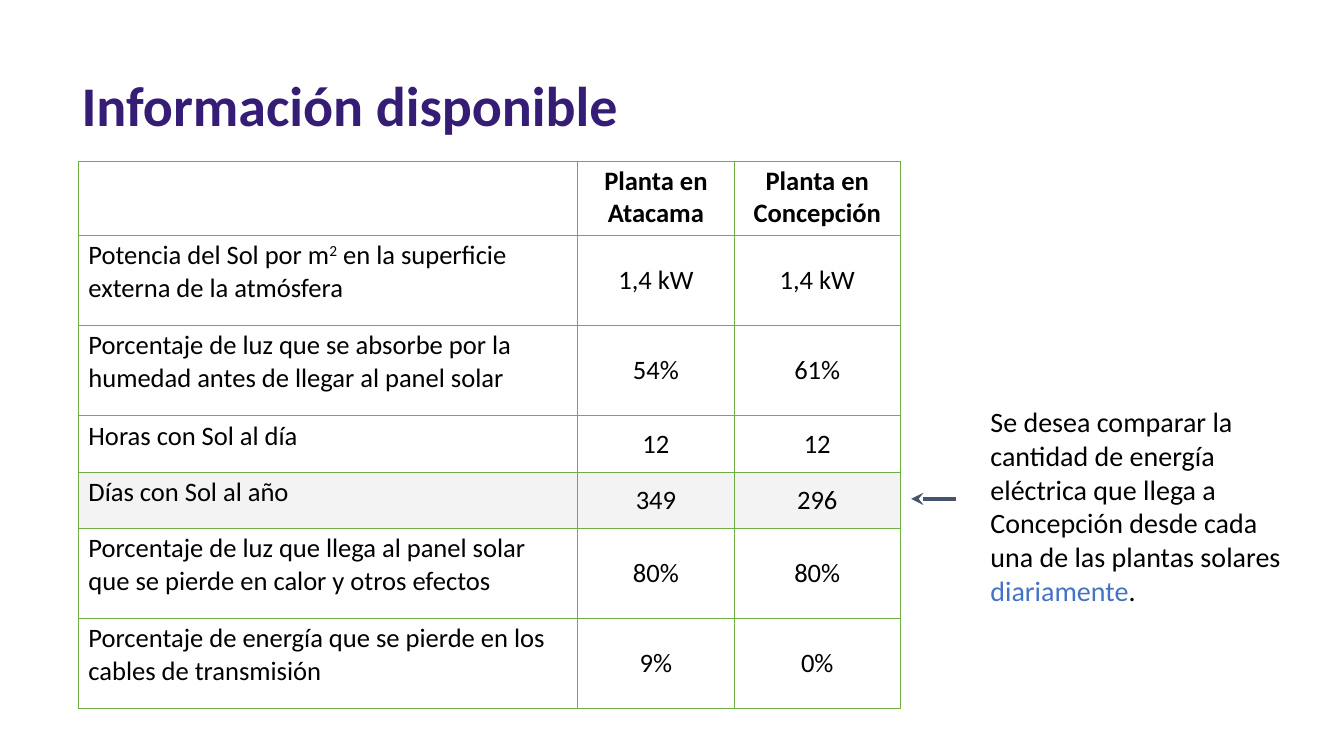
from typing import NamedTuple

import pptx
import pptx.dml.color
import pptx.enum.shapes
import pptx.enum.text
import pptx.oxml
import pptx.oxml.ns
import pptx.util
from pptx.dml.color import RGBColor
from pptx.enum.text import MSO_ANCHOR, MSO_AUTO_SIZE, PP_ALIGN
from pptx.util import Cm, Pt

FONT = "Calibri"
PURPLE = RGBColor(0x35, 0x1C, 0x75)
BLACK = RGBColor(0x00, 0x00, 0x00)
WHITE = RGBColor(0xFF, 0xFF, 0xFF)
GREEN = RGBColor(0x70, 0xAD, 0x47)
GREY = RGBColor(0xF3, 0xF3, 0xF3)
BLUE = RGBColor(0x44, 0x72, 0xC4)
SLATE = RGBColor(0x44, 0x54, 0x6A)

COLUMN_WIDTHS = (12.57, 3.96, 4.17)
HEADERS = ("", "Planta en Atacama", "Planta en Concepción")


class Row(NamedTuple):
    label: str  # a caret encloses superscript text
    atacama: str
    concepcion: str
    height: float
    fill: RGBColor = WHITE


ROWS = (
    Row("Potencia del Sol por m^2^ en la superficie externa de la atmósfera",
        "1,4 kW", "1,4 kW", 2.27),
    Row("Porcentaje de luz que se absorbe por la humedad antes de llegar al panel solar",
        "54%", "61%", 2.27),
    Row("Horas con Sol al día", "12", "12", 1.42),
    Row("Días con Sol al año", "349", "296", 1.42, GREY),
    Row("Porcentaje de luz que llega al panel solar que se pierde en calor y otros efectos",
        "80%", "80%", 2.27),
    Row("Porcentaje de energía que se pierde en los cables de transmisión",
        "9%", "0%", 2.27),
)


def set_font(font, size: float, color: RGBColor, bold: bool = False) -> None:
    font.name = FONT
    font.size = Pt(size)
    font.bold = bold
    font.color.rgb = color


def add_borders(cell) -> None:
    tcPr = cell._tc.get_or_add_tcPr()
    for i, side in enumerate(("lnL", "lnR", "lnT", "lnB")):
        tcPr.insert(i, pptx.oxml.parse_xml(
            f'<a:{side} {pptx.oxml.ns.nsdecls("a")} w="{Pt(0.75)}"><a:solidFill>'
            f'<a:srgbClr val="{GREEN}"/></a:solidFill></a:{side}>'))


def fill_cell(cell, text: str, fill: RGBColor, align: PP_ALIGN,
              anchor: MSO_ANCHOR, bold: bool = False) -> None:
    cell.fill.solid()
    cell.fill.fore_color.rgb = fill
    add_borders(cell)
    cell.vertical_anchor = anchor
    cell.margin_left = cell.margin_right = Cm(0.25)
    cell.margin_top = cell.margin_bottom = Cm(0.1)
    p = cell.text_frame.paragraphs[0]
    p.alignment = align
    set_font(p.font, 19, BLACK, bold)
    if not text:
        return
    for i, part in enumerate(text.split("^")):
        r = p.add_run()
        r.text = part
        set_font(r.font, 19, BLACK, bold)
        if i % 2:
            r._r.get_or_add_rPr().set("baseline", "30000")


def add_title(s) -> None:
    sp = s.shapes.title
    sp.left, sp.top, sp.width, sp.height = Cm(1.8), Cm(1.65), Cm(21.82), Cm(1.96)
    tf = sp.text_frame
    tf.text = "Información disponible"
    tf.word_wrap = True
    tf.auto_size = MSO_AUTO_SIZE.SHAPE_TO_FIT_TEXT
    tf.vertical_anchor = MSO_ANCHOR.TOP
    p = tf.paragraphs[0]
    p.alignment = PP_ALIGN.LEFT
    set_font(p.font, 40, PURPLE, True)


def add_data_table(s) -> None:
    heights = (1.88, *(row.height for row in ROWS))
    table = s.shapes.add_table(
        len(heights), len(COLUMN_WIDTHS), Cm(1.98), Cm(4.06),
        Cm(sum(COLUMN_WIDTHS)), Cm(sum(heights))).table
    table.horz_banding = False
    for column, width in zip(table.columns, COLUMN_WIDTHS):
        column.width = Cm(width)
    for table_row, height in zip(table.rows, heights):
        table_row.height = Cm(height)
    for c, header in enumerate(HEADERS):
        fill_cell(table.cell(0, c), header, WHITE, PP_ALIGN.CENTER, MSO_ANCHOR.TOP, True)
    for i, row in enumerate(ROWS, 1):
        fill_cell(table.cell(i, 0), row.label, row.fill, PP_ALIGN.LEFT, MSO_ANCHOR.TOP)
        for c, value in enumerate((row.atacama, row.concepcion), 1):
            fill_cell(table.cell(i, c), value, row.fill, PP_ALIGN.CENTER, MSO_ANCHOR.MIDDLE)


def add_note(s) -> None:
    tf = s.shapes.add_textbox(Cm(24.71), Cm(10.08), Cm(8), Cm(5.38)).text_frame
    tf.word_wrap = True
    tf.auto_size = MSO_AUTO_SIZE.SHAPE_TO_FIT_TEXT
    p = tf.paragraphs[0]
    for text, color in (
        ("Se desea comparar la cantidad de energía eléctrica que llega a "
         "Concepción desde cada una de las plantas solares ", BLACK),
        ("diariamente", BLUE),
        (".", BLACK),
    ):
        r = p.add_run()
        r.text = text
        set_font(r.font, 20, color)


def add_arrow(s) -> None:
    arrow = s.shapes.add_connector(
        pptx.enum.shapes.MSO_CONNECTOR.STRAIGHT, Cm(24.08), Cm(12.57), Cm(22.96), Cm(12.57))
    arrow.line.color.rgb = SLATE
    arrow.line.width = Pt(3)
    ns = pptx.oxml.ns.nsdecls("a")
    arrow.line._get_or_add_ln().append(
        pptx.oxml.parse_xml(f'<a:tailEnd {ns} type="stealth"/>'))
    arrow._element.spPr.append(pptx.oxml.parse_xml(f"<a:effectLst {ns}/>"))


def main() -> None:
    prs = pptx.Presentation()
    prs.slide_width, prs.slide_height = Cm(33.87), Cm(19.05)
    s = prs.slides.add_slide(prs.slide_layouts[5])  # title only
    add_title(s)
    add_data_table(s)
    # Remark pointing at the highlighted row
    add_note(s)
    add_arrow(s)
    prs.save("out.pptx")


if __name__ == "__main__":
    main()
